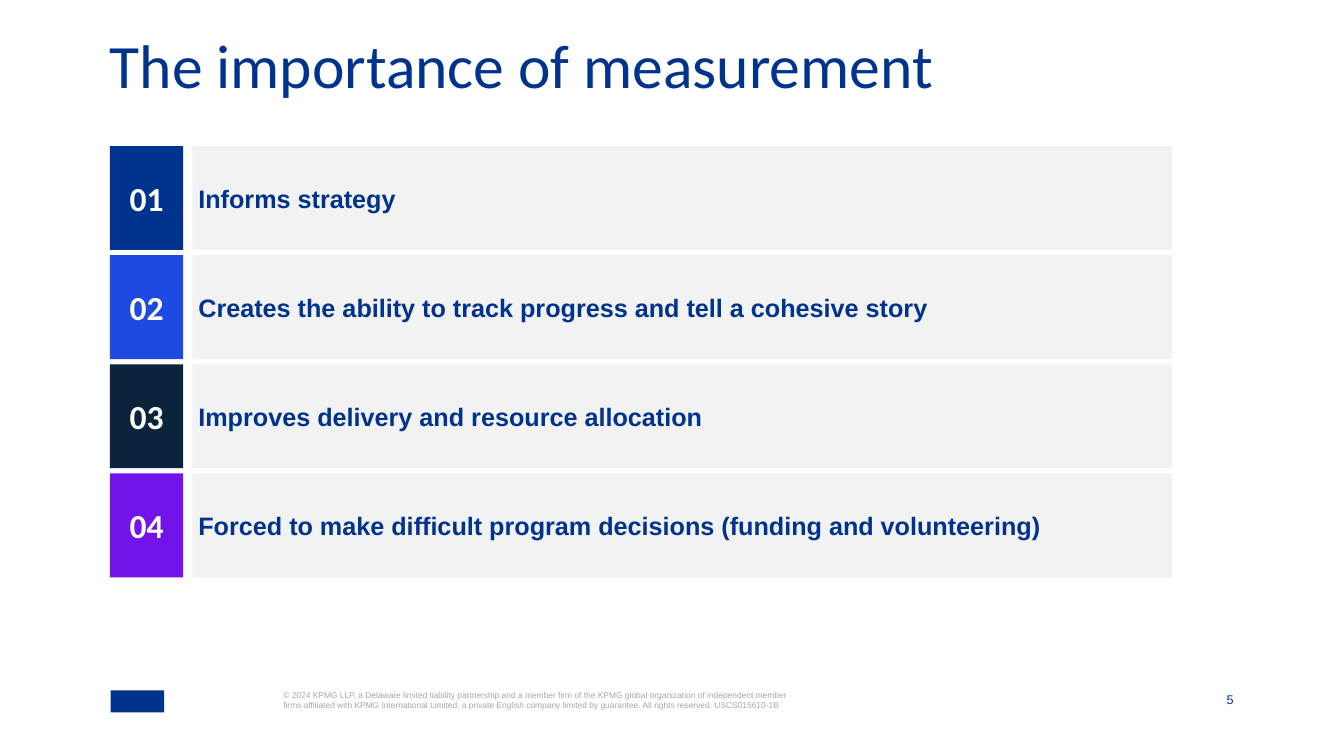
"""Build the slide on the importance of measurement."""
import pptx
import pptx.dml.color
import pptx.enum.shapes
import pptx.enum.text
import pptx.util

Cm = pptx.util.Cm
Align = pptx.enum.text.PP_ALIGN
Anchor = pptx.enum.text.MSO_ANCHOR
BLUE = "00338D"
WHITE = "FFFFFF"
PALE = "F2F2F2"
GREY = "A6A6A6"


def color(code):
    return pptx.dml.color.RGBColor.from_string(code)


class Deck:
    def __init__(self):
        self.file = pptx.Presentation()
        self.file.slide_width = Cm(33.87)
        self.file.slide_height = Cm(19.05)
        self.slide = self.file.slides.add_slide(self.file.slide_layouts[6])

    def label(self, shape, words, size, font, ink, bold=False,
              align=Align.LEFT, anchor=Anchor.TOP, inset=0, lead=None):
        frame = shape.text_frame
        frame.text = words
        frame.word_wrap = True
        frame.vertical_anchor = anchor
        frame.margin_left = frame.margin_right = Cm(inset)
        frame.margin_top = frame.margin_bottom = Cm(inset)
        line = frame.paragraphs[0]
        line.alignment = align
        line.line_spacing = lead
        style = line.runs[0].font
        style.size = pptx.util.Pt(size)
        style.name = font
        style.bold = bold
        style.color.rgb = color(ink)

    def text(self, box, words, size, font, ink, **opts):
        shape = self.slide.shapes.add_textbox(*map(Cm, box))
        self.label(shape, words, size, font, ink, **opts)

    def rect(self, box, fill):
        kind = pptx.enum.shapes.MSO_SHAPE.RECTANGLE
        shape = self.slide.shapes.add_shape(kind, *map(Cm, box))
        shape.shadow.inherit = False
        shape.fill.solid()
        shape.fill.fore_color.rgb = color(fill)
        shape.line.fill.background()
        return shape

    def row(self, index, fill, words):
        top = 3.68 + 2.75 * index
        opts = {"bold": True, "anchor": Anchor.MIDDLE, "inset": 0.15}
        tile = self.rect((2.77, top, 1.85, 2.62), fill)
        self.label(tile, f"{index + 1:02}", 24, "Calibri", WHITE,
                   align=Align.CENTER, **opts)
        bar = self.rect((4.85, top, 24.7, 2.62), PALE)
        self.label(bar, words, 18, "Arial", BLUE, **opts)


def main():
    deck = Deck()
    deck.text((2.77, 1.19, 28.35, 1.47), "The importance of measurement",
              44, "Calibri", BLUE, lead=0.7)
    rows = [
        (BLUE, "Informs strategy"),
        ("1E49E2", "Creates the ability to track progress and tell a cohesive story"),
        ("0C233C", "Improves delivery and resource allocation"),
        ("7213EA", "Forced to make difficult program decisions (funding and volunteering)"),
    ]
    for index, (fill, words) in enumerate(rows):
        deck.row(index, fill, words)
    deck.rect((2.79, 17.4, 1.35, 0.55), BLUE)
    deck.text((7.14, 17.4, 12.95, 0.51),
              "© 2024 KPMG LLP, a Delaware limited liability partnership and a "
              "member firm of the KPMG global organization of independent member "
              "firms affiliated with KPMG International Limited, a private English "
              "company limited by guarantee. All rights reserved. USCS015610-1B",
              6, "Arial", GREY)
    deck.text((30.4, 17.4, 0.69, 0.41), "5", 9, "Arial", BLUE,
              align=Align.RIGHT, anchor=Anchor.BOTTOM)
    deck.file.save("out.pptx")


if __name__ == "__main__":
    main()
